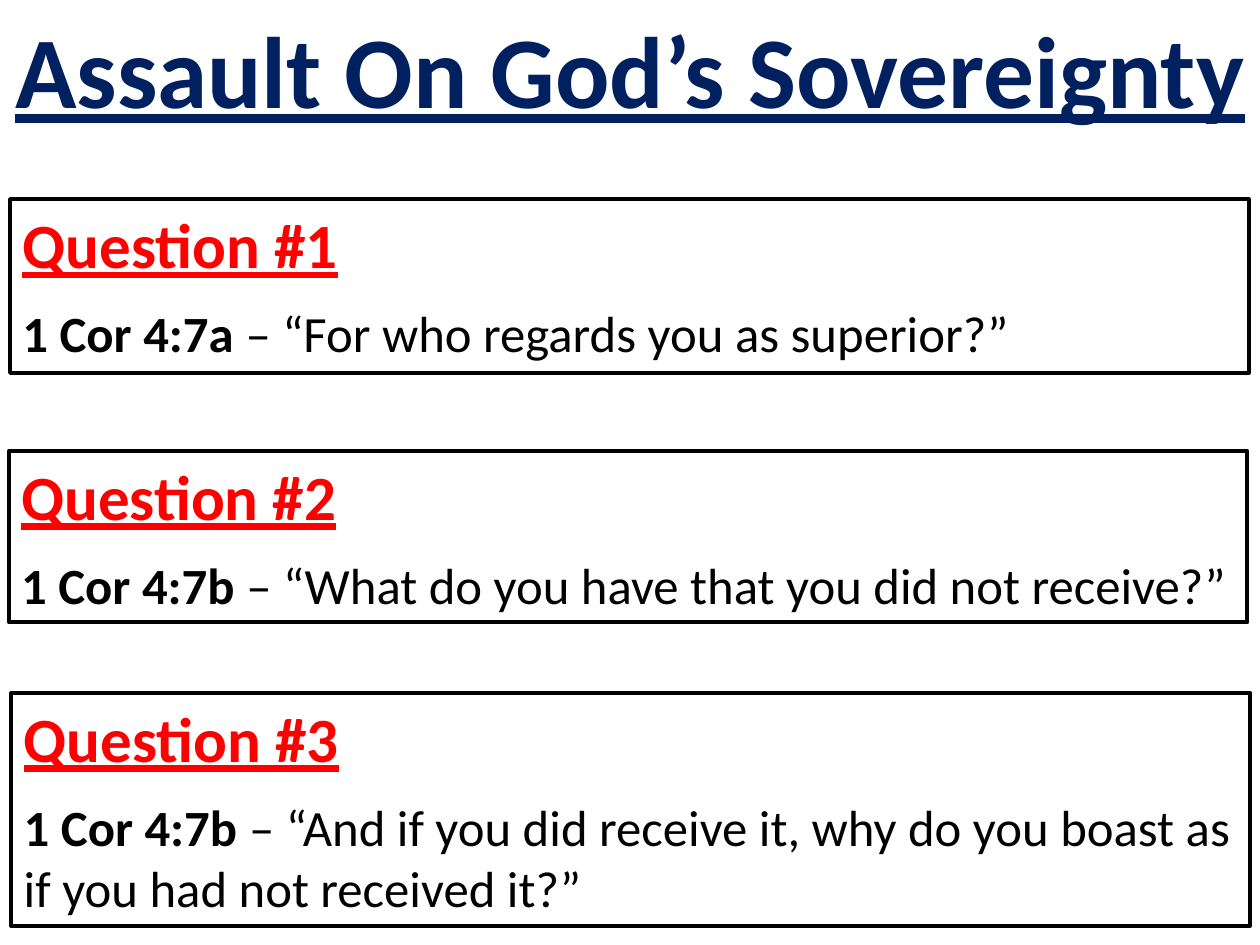
"""Build the slide of three questions from 1 Corinthians 4:7."""
from pptx import Presentation
from pptx.dml.color import RGBColor
from pptx.enum import shapes, text
from pptx.util import Inches, Pt

NAVY = RGBColor(0x00, 0x20, 0x60)
RED = RGBColor(0xFF, 0x00, 0x00)
BLACK = RGBColor(0x00, 0x00, 0x00)


def add_run(paragraph, words, size, color, bold=True, underline=False):
    run = paragraph.add_run()
    run.text = words
    run.font.color.rgb = color
    style = {"name": "Calibri", "size": Pt(size), "bold": bold, "underline": underline}
    for key, value in style.items():
        setattr(run.font, key, value)


prs = Presentation()
prs.slide_width, prs.slide_height = Inches(10), Inches(7.5)
slide = prs.slides.add_slide(prs.slide_layouts[6])

title = slide.shapes.add_textbox(0, 0, Inches(10), Inches(1.08)).text_frame
title_format = {
    "word_wrap": True,
    "vertical_anchor": text.MSO_ANCHOR.MIDDLE,
    "margin_left": 0,
    "margin_right": 0,
}
for key, value in title_format.items():
    setattr(title, key, value)
title.paragraphs[0].alignment = text.PP_ALIGN.CENTER
add_run(title.paragraphs[0], "Assault On God’s Sovereignty", 58, NAVY, underline=True)

questions = [
    (0.08, 1.58, 1.38, "1 Cor 4:7a", " – “For who regards you as superior?”"),
    (0.07, 3.58, 1.36, "1 Cor 4:7b ", "– “What do you have that you did not receive?”"),
    (0.09, 5.5, 1.85, "1 Cor 4:7b ",
     "– “And if you did receive it, why do you boast as if you had not received it?”"),
]
question_format = {
    "word_wrap": True,
    "vertical_anchor": text.MSO_ANCHOR.TOP,
    "auto_size": text.MSO_AUTO_SIZE.SHAPE_TO_FIT_TEXT,
}
for number, (left, top, height, reference, quote) in enumerate(questions, 1):
    question = slide.shapes.add_shape(
        shapes.MSO_SHAPE.RECTANGLE, Inches(left), Inches(top), Inches(9.83), Inches(height))
    question.shadow.inherit = False
    question.fill.background()
    question.line.color.rgb = BLACK
    question.line.width = Pt(2.25)
    frame = question.text_frame
    for key, value in question_format.items():
        setattr(frame, key, value)
    heading, verse = frame.paragraphs[0], frame.add_paragraph()
    heading.alignment = verse.alignment = text.PP_ALIGN.LEFT
    verse.space_before = Pt(12)
    add_run(heading, f"Question #{number}", 36, RED, underline=True)
    add_run(verse, reference, 29, BLACK)
    add_run(verse, quote, 29, BLACK, bold=False)

prs.save("out.pptx")
